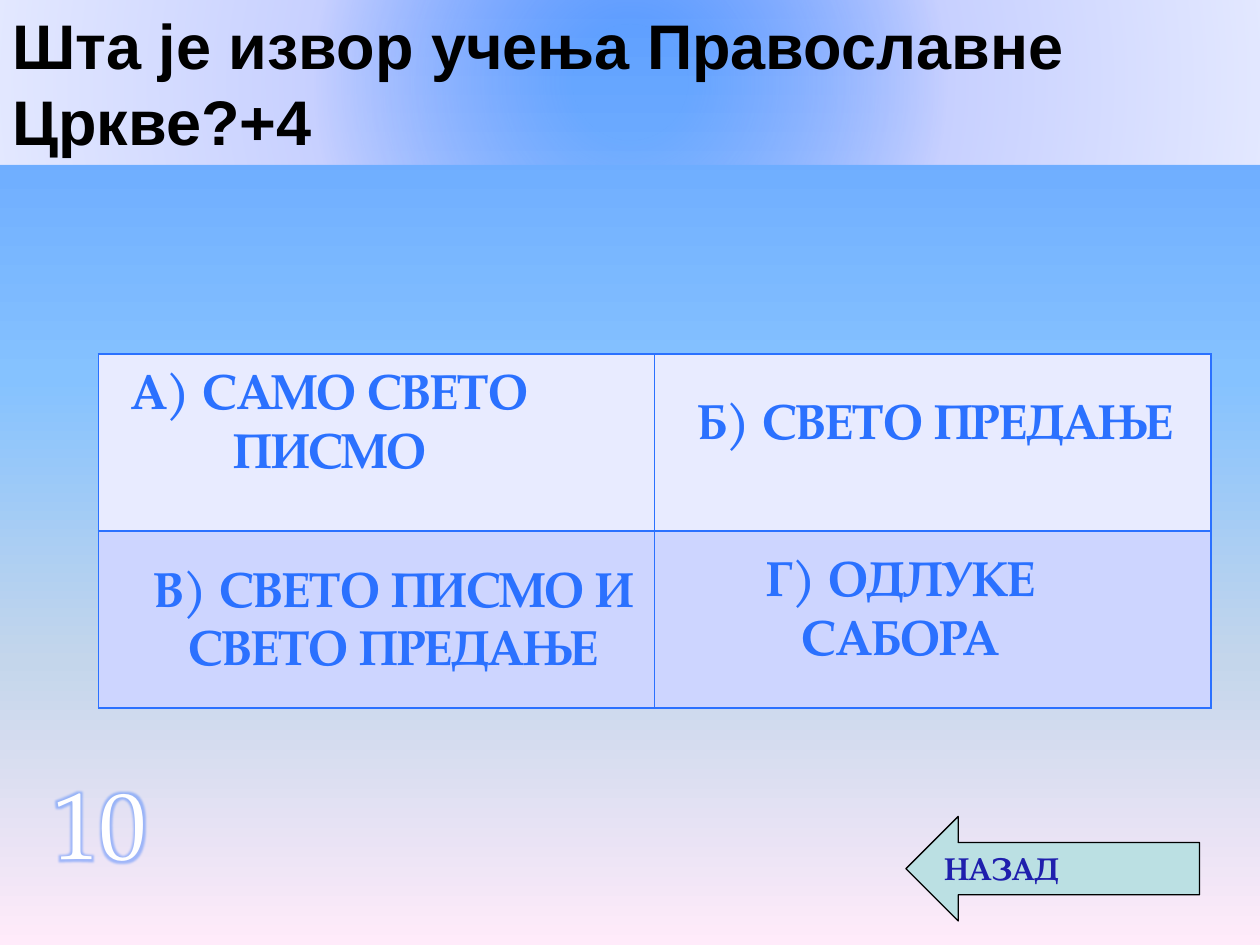
from lxml import etree
from pptx import Presentation
from pptx.dml.color import RGBColor
from pptx.enum.shapes import MSO_SHAPE as Shape
from pptx.enum.text import MSO_ANCHOR as Anchor, PP_ALIGN as Align
from pptx.oxml import parse_xml
from pptx.oxml.ns import nsdecls, qn
from pptx.util import Inches, Pt

BLACK = RGBColor(0x00, 0x00, 0x00)
WHITE = RGBColor(0xFF, 0xFF, 0xFF)
BLUE = RGBColor(0x2B, 0x71, 0xFF)
NAVY = RGBColor(0x1F, 0x1F, 0xAD)
TEAL = RGBColor(0xBB, 0xE0, 0xE3)
ROW_FILLS = [RGBColor(0xE8, 0xEB, 0xFF), RGBColor(0xCD, 0xD5, 0xFF)]
SKY_STOPS = [(0, "5E9EFF", 100), (40, "85C2FF", 100), (70, "C4D6EB", 100), (100, "FFEBFA", 100)]
BAND_STOPS = [(9, "A2B3FF", 0), (50, "C7D0FF", 100), (100, "E3E8FF", 100)]
SERIF = "TeX Gyre Pagella"


def set_stops(gradient, stops):
    stop_list = gradient.find(qn("a:gsLst"))
    stop_list.clear()
    for position, color, alpha in stops:
        stop = etree.SubElement(stop_list, qn("a:gs"), pos=str(position * 1000))
        tint = etree.SubElement(stop, qn("a:srgbClr"), val=color)
        if alpha < 100:
            etree.SubElement(tint, qn("a:alpha"), val=str(alpha * 1000))


def write(box, text, size, color, font=SERIF, bold=True, align=Align.LEFT, wrap=True):
    frame = box.text_frame
    frame.word_wrap = wrap
    frame.text = text
    para = frame.paragraphs[0]
    para.alignment = align
    span = para.runs[0]
    span.font.name = font
    span.font.size = Pt(size)
    span.font.bold = bold
    span.font.color.rgb = color
    return span


deck = Presentation()
deck.slide_width, deck.slide_height = Inches(10), Inches(7.5)
page = deck.slides.add_slide(deck.slide_layouts[6])

sky = page.background.fill
sky.gradient()
sky.gradient_angle = 270
set_stops(page.element.find(".//" + qn("a:gradFill")), SKY_STOPS)

band = page.shapes.add_shape(Shape.RECTANGLE, 0, 0, Inches(10), Inches(1.31))
band.shadow.inherit = False
band.line.fill.background()
band.fill.gradient()
glare = band.element.find(".//" + qn("a:gradFill"))
set_stops(glare, BAND_STOPS)
glare.replace(glare.find(qn("a:lin")), parse_xml(
    f'<a:path {nsdecls("a")} path="circle">'
    '<a:fillToRect l="50000" t="50000" r="50000" b="50000"/></a:path>'))
band.text_frame.vertical_anchor = Anchor.MIDDLE
write(band, "Шта је извор учења Православне Цркве?+4", 36, BLACK, font="Arial")

score = page.shapes.add_textbox(Inches(0.31), Inches(6.02), Inches(0.96), Inches(1.01))
digits = write(score, "10", 54, WHITE, bold=False, align=Align.CENTER, wrap=False)
digits.font.fill._xPr.find(qn("a:solidFill")).addnext(parse_xml(
    f'<a:effectLst {nsdecls("a")}><a:glow rad="63500"><a:srgbClr val="{BLUE}">'
    '<a:alpha val="40000"/></a:srgbClr></a:glow></a:effectLst>'))

back = page.shapes.add_shape(Shape.LEFT_ARROW, Inches(7.19), Inches(6.48), Inches(2.33), Inches(0.83))
back.shadow.inherit = False
back.fill.solid()
back.fill.fore_color.rgb = TEAL
back.line.color.rgb = BLACK
back.line.width = Pt(0.75)
back.text_frame.vertical_anchor = Anchor.TOP
write(back, "НАЗАД", 18, NAVY)

grid = page.shapes.add_table(2, 2, Inches(0.78), Inches(2.81), Inches(8.83), Inches(2.81)).table
for row, color in zip(grid.rows, ROW_FILLS):
    for cell in row.cells:
        cell.fill.solid()
        cell.fill.fore_color.rgb = color
        properties = cell._tc.get_or_add_tcPr()
        for index, side in enumerate(["lnL", "lnR", "lnT", "lnB"]):
            properties.insert(index, parse_xml(
                f'<a:{side} {nsdecls("a")} w="12700"><a:solidFill>'
                f'<a:srgbClr val="{BLUE}"/></a:solidFill></a:{side}>'))

answers = [
    ("А) САМО СВЕТО ПИСМО", 0.7, 2.81, 3.83, 1.04),
    ("Б) СВЕТО ПРЕДАЊЕ", 5.31, 3.05, 4.22, 0.57),
    ("В) СВЕТО ПИСМО И СВЕТО ПРЕДАЊЕ", 1.09, 4.38, 4.06, 1.04),
    ("Г) ОДЛУКЕ САБОРА", 5.23, 4.3, 3.83, 1.04),
]
for text, *place in answers:
    answer = page.shapes.add_textbox(*map(Inches, place))
    write(answer, text, 28, BLUE, align=Align.CENTER)

deck.save("out.pptx")
